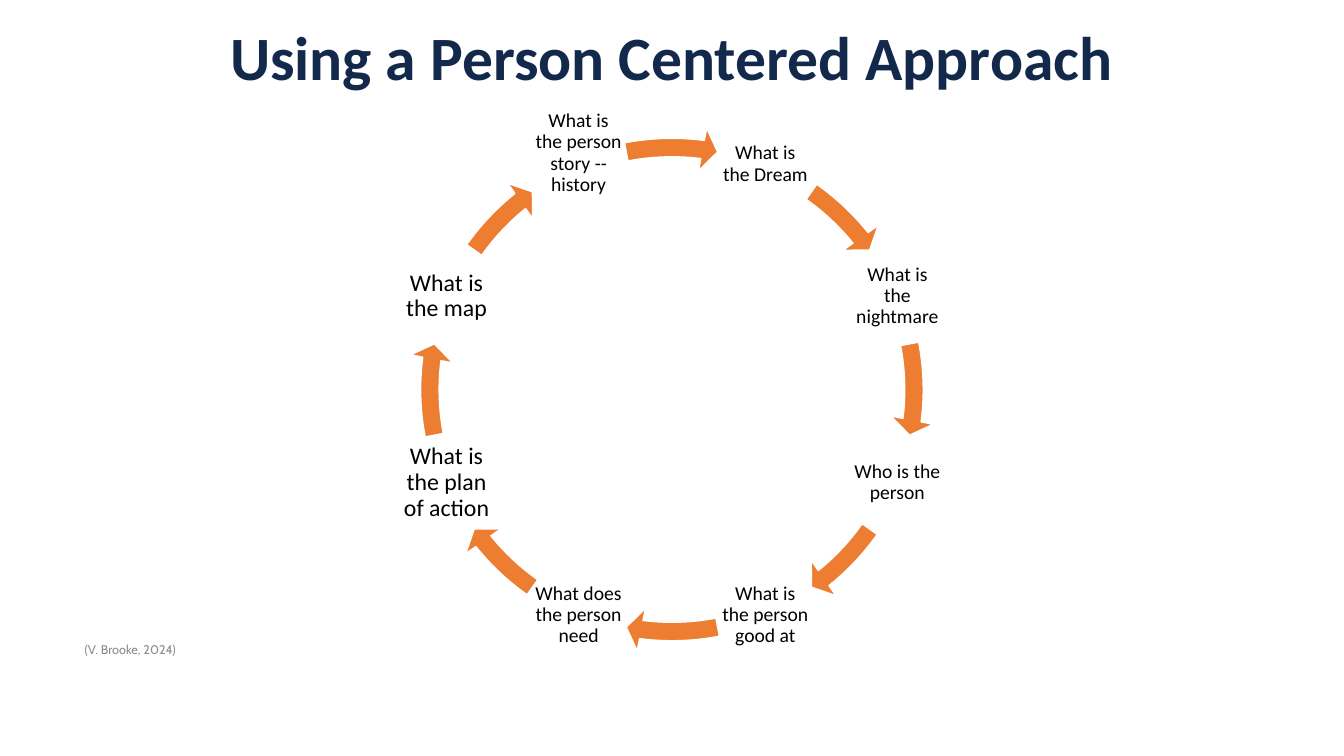
import math

import pptx
import pptx.dml.color
import pptx.enum.shapes
import pptx.enum.text
import pptx.util

Inches = pptx.util.Inches
ALIGN = pptx.enum.text.PP_ALIGN

# Label, font size, upward shift of the label box
STEPS = [
    ("What is the Dream", 14, 0),
    ("What is the nightmare", 14, 0),
    ("Who is the person", 14, 0),
    ("What is the person good at", 14, 0),
    ("What does the person need", 14, 0),
    ("What is the plan of action", 17, 0),
    ("What is the map", 17, 0),
    ("What is the person story -- history", 14, 0.11),
]
LABEL_SIZE = 0.94
LABEL_RADIUS = 2.42
HEAD_ANGLE = 3.61


def color(hex_string):
    return pptx.dml.color.RGBColor.from_string(hex_string)


def write(tf, text, size, font, hex_string, align=ALIGN.LEFT, bold=False):
    tf.word_wrap = True
    tf.vertical_anchor = pptx.enum.text.MSO_ANCHOR.MIDDLE
    p = tf.paragraphs[0]
    p.alignment = align
    r = p.add_run()
    r.text = text
    r.font.size = pptx.util.Pt(size)
    r.font.name = font
    r.font.bold = bold
    r.font.color.rgb = color(hex_string)
    return p


def add_title(s, left, top, width, height):
    sp = s.shapes.title
    sp.left, sp.top = Inches(left), Inches(top)
    sp.width, sp.height = Inches(width), Inches(height)
    p = write(sp.text_frame, "Using a Person Centered Approach", 44,
              "Calibri", "13294B", ALIGN.CENTER, True)
    p.line_spacing = 0.9


def add_label(s, center_x, center_y, text, size):
    sp = s.shapes.add_textbox(
        Inches(center_x - LABEL_SIZE / 2), Inches(center_y - LABEL_SIZE / 2),
        Inches(LABEL_SIZE), Inches(LABEL_SIZE))
    tf = sp.text_frame
    tf.margin_left = tf.margin_right = Inches(0.02)
    tf.margin_top = tf.margin_bottom = Inches(0.02)
    p = write(tf, text, size, "Calibri", "000000", ALIGN.CENTER)
    p.line_spacing = 0.9


def add_arrow(s, left, top, size, middle, half_span):
    """Add a clockwise arc arrow; middle and half_span are in degrees."""
    sp = s.shapes.add_shape(pptx.enum.shapes.MSO_SHAPE.CIRCULAR_ARROW,
                            Inches(left), Inches(top), Inches(size), Inches(size))
    sp.shadow.inherit = False
    sp.fill.solid()
    sp.fill.fore_color.rgb = color("ED7D31")
    sp.line.color.rgb = color("FFFFFF")
    sp.line.width = pptx.util.Pt(1)
    end = (middle + half_span - HEAD_ANGLE) % 360
    start = (middle - half_span) % 360
    # Angles are stored in 60000ths of a degree, adjustments in 100000ths
    values = (0.035, HEAD_ANGLE * 0.6, end * 0.6, start * 0.6, 0.041)
    for i, value in enumerate(values):
        sp.adjustments[i] = value


def add_cycle(s, left, top, size):
    center_x, center_y = left + size / 2, top + size / 2
    step_angle = 360 / len(STEPS)
    for i, (text, font_size, shift) in enumerate(STEPS):
        angle = -67.5 + i * step_angle
        add_label(s, center_x + LABEL_RADIUS * math.cos(math.radians(angle)),
                  center_y + LABEL_RADIUS * math.sin(math.radians(angle)) - shift,
                  text, font_size)
        half_span = 10.88 if i % 2 else 9.79
        add_arrow(s, left, top, size, angle + step_angle / 2, half_span)


def add_citation(s, left, top, width, height):
    sp = s.shapes.add_textbox(Inches(left), Inches(top), Inches(width), Inches(height))
    write(sp.text_frame, "(V. Brooke, 2024)", 9, "Cabin", "8C8C8C")


def main():
    prs = pptx.Presentation()
    prs.slide_width, prs.slide_height = Inches(13.33), Inches(7.5)
    s = prs.slides.add_slide(prs.slide_layouts[5])
    add_title(s, 0, -0.12, 13.33, 1.45)
    add_cycle(s, 4.05, 1.25, 5.23)
    add_citation(s, 0.74, 6.24, 6.89, 0.4)
    prs.save("out.pptx")


if __name__ == "__main__":
    main()
